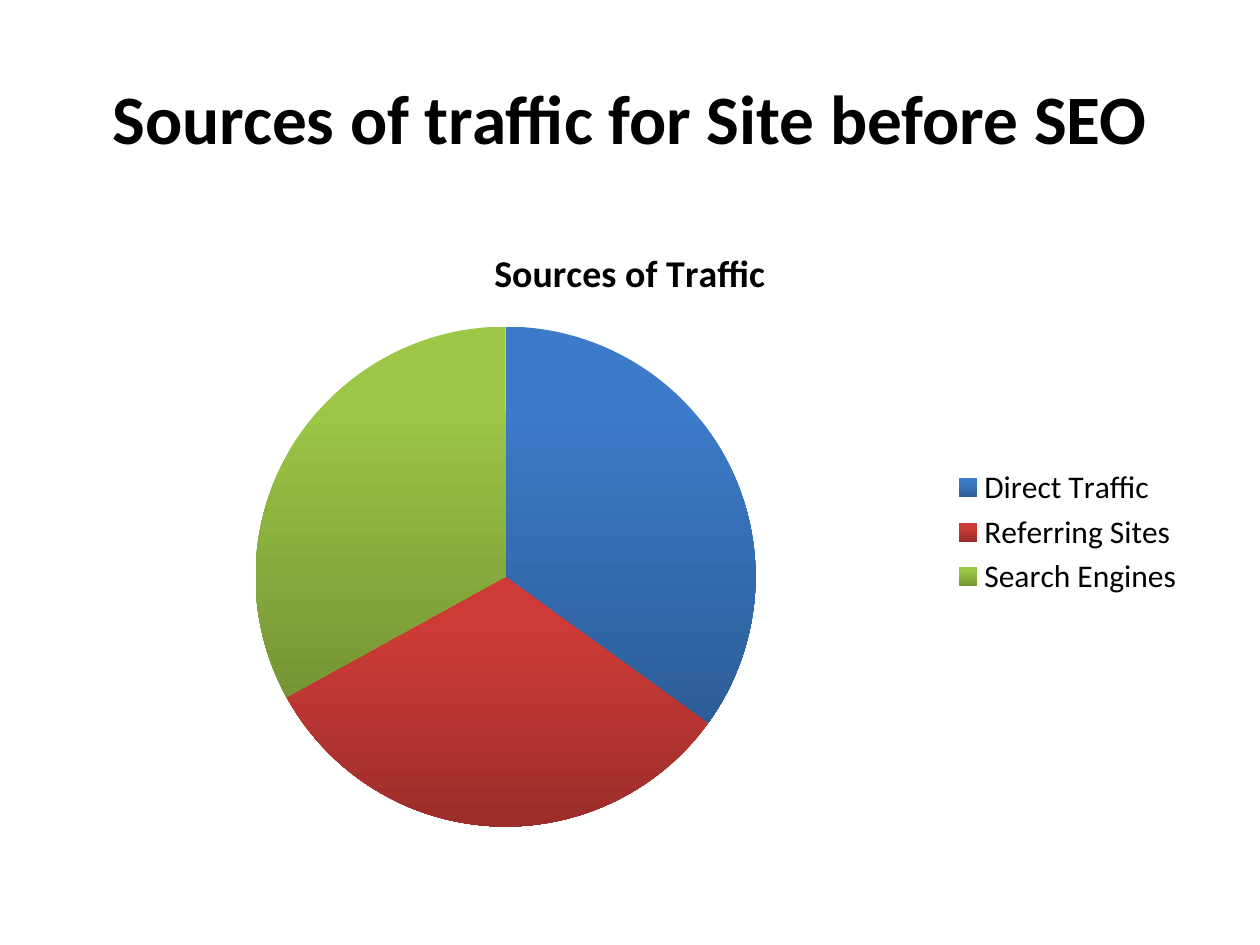
from pptx import Presentation
from pptx import util as u
from pptx.chart.data import CategoryChartData
from pptx.dml.color import RGBColor
from pptx.enum import chart as ch, text

HEADING = "Sources of traffic for Site before SEO"
CHART_TITLE = "Sources of Traffic"
SOURCES = [
    ("Direct Traffic", 35, "blue"),
    ("Referring Sites", 32, "red"),
    ("Search Engines", 33, "green"),
]
COLORS = {
    "ink": "000000",
    "blue": ("3C7BC9", "2C5D98"),
    "red": ("CE3B37", "9B2D2A"),
    "green": ("9CC746", "769535"),
}
FONT = "Calibri"
PX = 914400 // 126
SLIDE_W, SLIDE_H = 1260, 945
MARGIN = 63
CONTENT_W = SLIDE_W - 2 * MARGIN


def box(top, height):
    return [u.Emu(n * PX) for n in (MARGIN, top, CONTENT_W, height)]


def style(font, size, bold=False):
    font.name = FONT
    font.size = u.Pt(size)
    font.bold = bold
    font.color.rgb = RGBColor.from_string(COLORS["ink"])


def add_heading(slide):
    frame = slide.shapes.add_textbox(*box(38, 157)).text_frame
    frame.word_wrap = True
    frame.vertical_anchor = text.MSO_ANCHOR.MIDDLE
    frame.text = HEADING
    line = frame.paragraphs[0]
    line.alignment = text.PP_ALIGN.CENTER
    style(line.runs[0].font, 39.6, True)


def shade(point, colors):
    fill = point.format.fill
    fill.gradient()
    fill.gradient_angle = 270
    for stop, color, position in zip(fill.gradient_stops, colors, (0.2, 1)):
        stop.color.rgb = RGBColor.from_string(color)
        stop.position = position


def add_traffic_pie(slide):
    data = CategoryChartData()
    data.categories = [name for name, _, _ in SOURCES]
    data.add_series("Series 1", [share for _, share, _ in SOURCES])
    pie = slide.shapes.add_chart(ch.XL_CHART_TYPE.PIE, *box(220, 624), data).chart
    style(pie.font, 18)

    pie.has_title = True
    pie.chart_title.include_in_layout = False
    title = pie.chart_title.text_frame
    title.text = CHART_TITLE
    style(title.paragraphs[0].runs[0].font, 21.6, True)

    pie.has_legend = True
    pie.legend.position = ch.XL_LEGEND_POSITION.RIGHT
    pie.legend.include_in_layout = False
    style(pie.legend.font, 18)

    plot = pie.plots[0]
    plot.vary_by_categories = True
    for i, (_, _, color) in enumerate(SOURCES):
        shade(plot.series[0].points[i], COLORS[color])


def main():
    deck = Presentation()
    deck.slide_width = u.Emu(SLIDE_W * PX)
    deck.slide_height = u.Emu(SLIDE_H * PX)
    slide = deck.slides.add_slide(deck.slide_layouts[6])
    add_heading(slide)
    add_traffic_pie(slide)
    deck.save("out.pptx")


if __name__ == "__main__":
    main()
